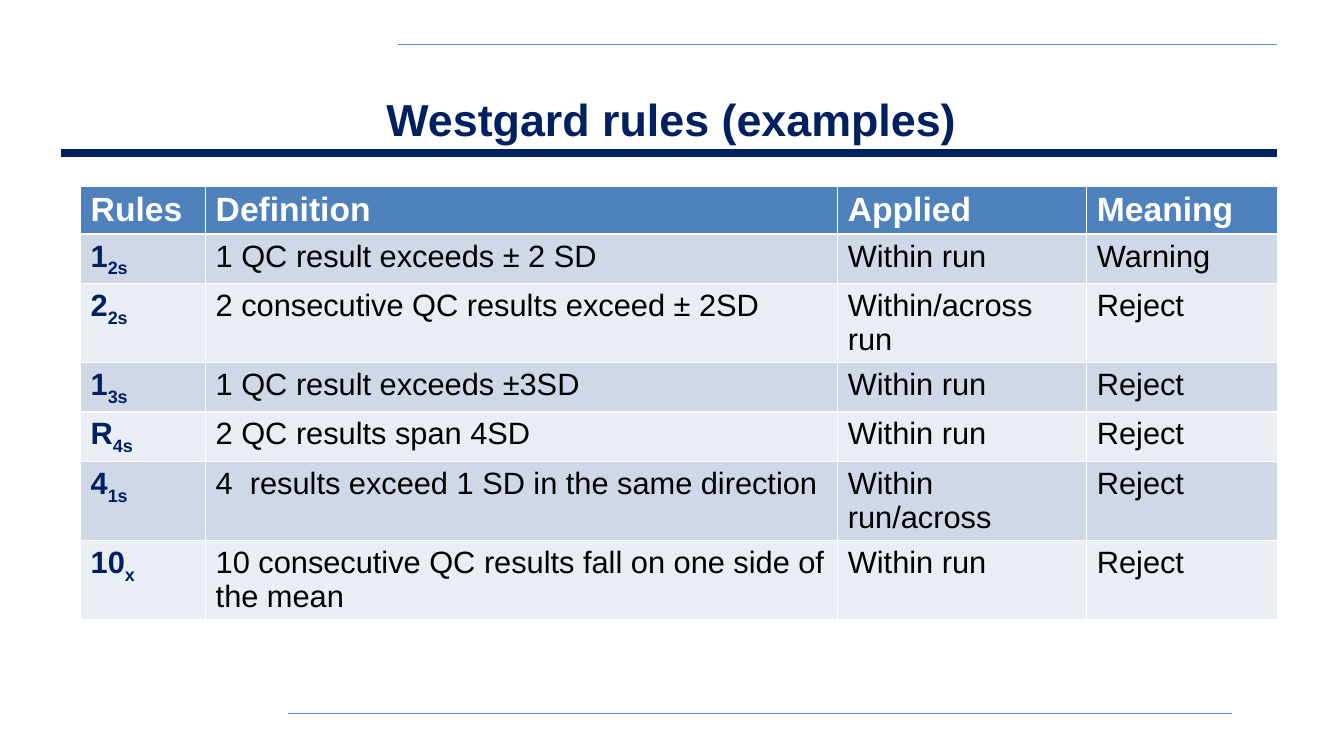
from lxml.etree import SubElement
from pptx import Presentation
from pptx.dml.color import RGBColor
from pptx.enum.shapes import MSO_CONNECTOR
from pptx.enum.text import MSO_ANCHOR, PP_ALIGN
from pptx.oxml.ns import qn
from pptx.util import Inches, Pt

# Content
TITLE = "Westgard rules (examples)"
HEADINGS = ["Rules", "Definition", "Applied", "Meaning"]
# (rule, subscript), definition, applied, meaning
RULES = [
    (("1", "2s"), "1 QC result exceeds ± 2 SD", "Within run", "Warning"),
    (("2", "2s"), "2 consecutive QC results exceed ± 2SD", "Within/across run", "Reject"),
    (("1", "3s"), "1 QC result exceeds ±3SD", "Within run", "Reject"),
    (("R", "4s"), "2 QC results span 4SD", "Within run", "Reject"),
    (("4", "1s"), "4  results exceed 1 SD in the same direction", "Within run/across", "Reject"),
    (("10", "x"), "10 consecutive QC results fall on one side of the mean", "Within run", "Reject"),
]

# Style
FONT = "Arial"
NAVY = RGBColor(0x00, 0x20, 0x60)
SKY = RGBColor(0x55, 0x8E, 0xD5)
HEADER_BLUE = RGBColor(0x4F, 0x81, 0xBD)
BANDS = [RGBColor(0xD0, 0xD8, 0xE8), RGBColor(0xE9, 0xED, 0xF4)]
WHITE = RGBColor(0xFF, 0xFF, 0xFF)
BLACK = RGBColor(0x00, 0x00, 0x00)

# Layout in inches
RIGHT = 12.67
COLUMNS = [1.24, 6.27, 2.47, 1.89]
TABLE_TOP = 1.85
ROW_HEIGHT = 0.38
# left, right, height on the page, colour, weight
RULERS = [
    (2.86, 12.22, 7.08, SKY, 0.5),
    (3.95, RIGHT, 0.44, SKY, 0.5),
    (0.61, RIGHT, 1.52, NAVY, 6),
]


def set_font(para, size, color, bold):
    font = para.font
    font.name, font.size, font.bold = FONT, Pt(size), bold
    font.color.rgb = color


def fill_cell(cell, text, fill, size, color, bold):
    cell.fill.solid()
    cell.fill.fore_color.rgb = fill
    para = cell.text_frame.paragraphs[0]
    base, subscript = text if isinstance(text, tuple) else (text, None)
    para.add_run().text = base
    if subscript:
        span = para.add_run()
        span.text = subscript
        span.font._element.set("baseline", "-25000")
    set_font(para, size, color, bold)


deck = Presentation()
deck.slide_width, deck.slide_height = Inches(13.33), Inches(7.5)
page = deck.slides.add_slide(deck.slide_layouts[5])

# Ruled lines
for left, right, y, color, weight in RULERS:
    ruler = page.shapes.add_connector(
        MSO_CONNECTOR.STRAIGHT, Inches(left), Inches(y), Inches(right), Inches(y))
    ruler.line.color.rgb = color
    ruler.line.width = Pt(weight)
    SubElement(ruler._element.spPr, qn("a:effectLst"))

# Title
title = page.shapes.title
title.left, title.top = Inches(2.35), Inches(0.82)
title.width, title.height = Inches(8.62), Inches(0.78)
title.text_frame.text = TITLE
title.text_frame.vertical_anchor = MSO_ANCHOR.MIDDLE
heading = title.text_frame.paragraphs[0]
heading.alignment = PP_ALIGN.CENTER
heading.line_spacing = 0.9
set_font(heading, 32, NAVY, True)

# Table: rows grow to fit their text
row_count = len(RULES) + 1
table = page.shapes.add_table(
    row_count, len(COLUMNS), Inches(RIGHT - sum(COLUMNS)), Inches(TABLE_TOP),
    Inches(sum(COLUMNS)), Inches(ROW_HEIGHT * row_count)).table
for column, width in zip(table.columns, COLUMNS):
    column.width = Inches(width)

for c, text in enumerate(HEADINGS):
    fill_cell(table.cell(0, c), text, HEADER_BLUE, 24, WHITE, True)
for r, rule in enumerate(RULES):
    for c, text in enumerate(rule):
        is_rule = c == 0
        fill_cell(table.cell(r + 1, c), text, BANDS[r % 2], 22,
                  NAVY if is_rule else BLACK, is_rule)

deck.save("out.pptx")
